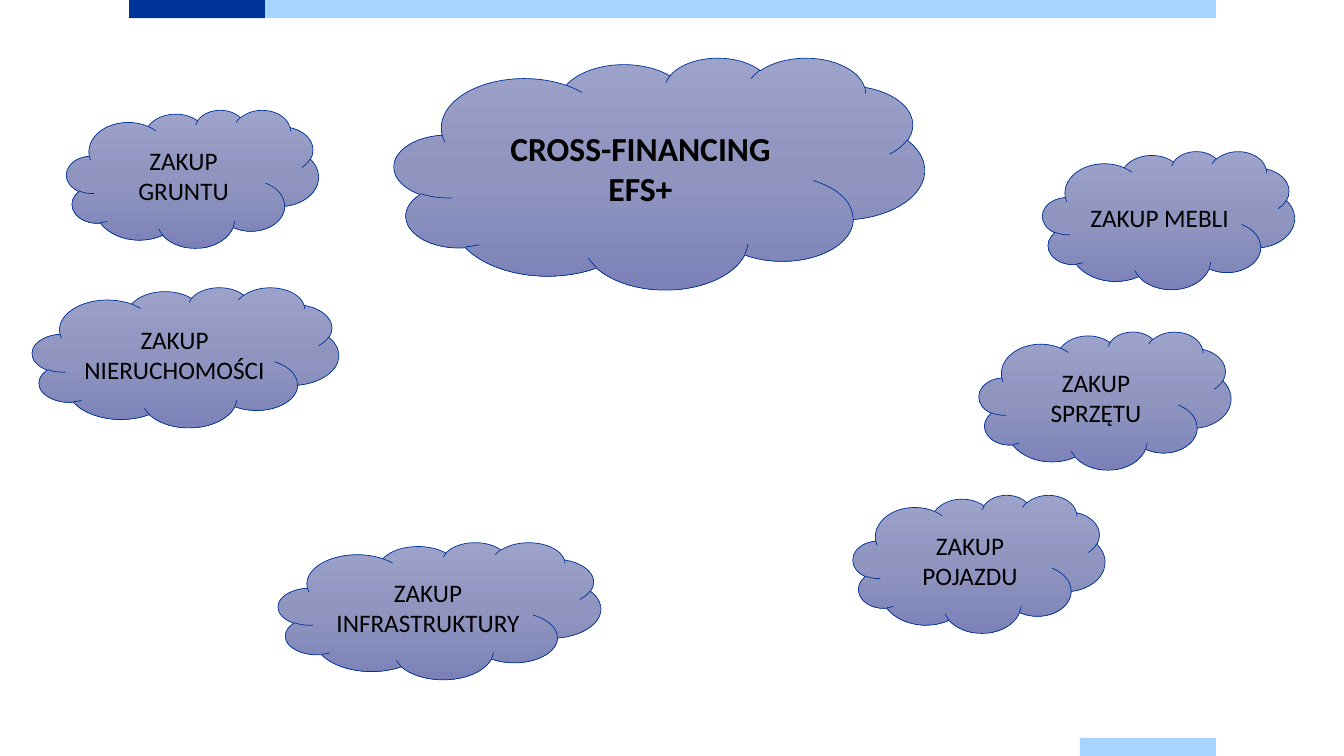
import copy

import pptx
import pptx.dml.color
import pptx.enum.shapes
import pptx.enum.text
import pptx.oxml.ns
import pptx.util
from pptx.util import Inches

COLOURS = {
    "navy": "003399",
    "sky": "A6D3FF",
    "cloud_top": "9DA2CA",
    "cloud_middle": "9095C0",
    "cloud_bottom": "7C82B8",
    "text": "000000",
}
CLOUD_STOPS = [(0, "cloud_top"), (0.5, "cloud_middle"), (1, "cloud_bottom")]
BARS = [
    (1.28, 0, 1.35, "navy"),
    (2.63, 0, 9.43, "sky"),
    (10.71, 7.32, 1.35, "sky"),
]
BAR_HEIGHT = 0.18
TITLE_FORMAT = {"name": "Calibri", "size": pptx.util.Pt(24), "bold": True}
COST_FORMAT = {"name": "Calibri", "size": pptx.util.Pt(18), "bold": False}
COSTS = [
    ("ZAKUP GRUNTU", 0.66, 1.09, 2.5, 1.37),
    ("ZAKUP NIERUCHOMOŚCI", 0.32, 2.85, 3.04, 1.39),
    ("ZAKUP MEBLI", 10.34, 1.5, 2.5, 1.37),
    ("ZAKUP SPRZĘTU", 9.71, 3.29, 2.5, 1.37),
    ("ZAKUP POJAZDU", 8.46, 4.91, 2.5, 1.37),
    ("ZAKUP INFRASTRUKTURY", 2.76, 5.38, 3.2, 1.36),
]


def colour(name):
    """Return the named colour."""
    return pptx.dml.color.RGBColor.from_string(COLOURS[name])


def add_figure(page, kind, left, top, width, height):
    """Add a preset shape without a shadow."""
    shape = page.shapes.add_shape(
        kind, Inches(left), Inches(top), Inches(width), Inches(height)
    )
    shape.shadow.inherit = False
    return shape


def add_bar(page, left, top, width, fill):
    """Add a plain bar at the edge of the page."""
    bar = add_figure(
        page, pptx.enum.shapes.MSO_SHAPE.RECTANGLE, left, top, width, BAR_HEIGHT
    )
    bar.fill.solid()
    bar.fill.fore_color.rgb = colour(fill)
    bar.line.fill.background()


def fill_gradient(shape):
    """Fill a shape with the three-stop gradient from top to bottom."""
    shape.fill.gradient()
    shape.fill.gradient_angle = 270
    stop_list = shape.element.spPr.find(".//" + pptx.oxml.ns.qn("a:gsLst"))
    stop_list.insert(1, copy.deepcopy(stop_list[0]))
    for stop, (position, name) in zip(shape.fill.gradient_stops, CLOUD_STOPS):
        stop.position = position
        stop.color.rgb = colour(name)


def add_cloud(page, text, left, top, width, height, font_format):
    """Add a cloud with centred text."""
    cloud = add_figure(
        page, pptx.enum.shapes.MSO_SHAPE.CLOUD, left, top, width, height
    )
    fill_gradient(cloud)
    cloud.line.color.rgb = colour("navy")
    cloud.line.width = pptx.util.Pt(0.5)
    frame = cloud.text_frame
    frame.word_wrap = True
    frame.vertical_anchor = pptx.enum.text.MSO_ANCHOR.MIDDLE
    para = frame.paragraphs[0]
    para.text = text
    para.alignment = pptx.enum.text.PP_ALIGN.CENTER
    for span in para.runs:
        span.font.color.rgb = colour("text")
        for attribute, value in font_format.items():
            setattr(span.font, attribute, value)


def main():
    """Build the slide and save it."""
    deck = pptx.Presentation()
    deck.slide_width = Inches(13.33)
    deck.slide_height = Inches(7.5)
    page = deck.slides.add_slide(deck.slide_layouts[6])
    for bar in BARS:
        add_bar(page, *bar)
    add_cloud(
        page, "CROSS-FINANCING\vEFS+", 3.91, 0.57, 5.26, 2.3, TITLE_FORMAT
    )
    for cost in COSTS:
        add_cloud(page, *cost, COST_FORMAT)
    deck.save("out.pptx")


if __name__ == "__main__":
    main()
